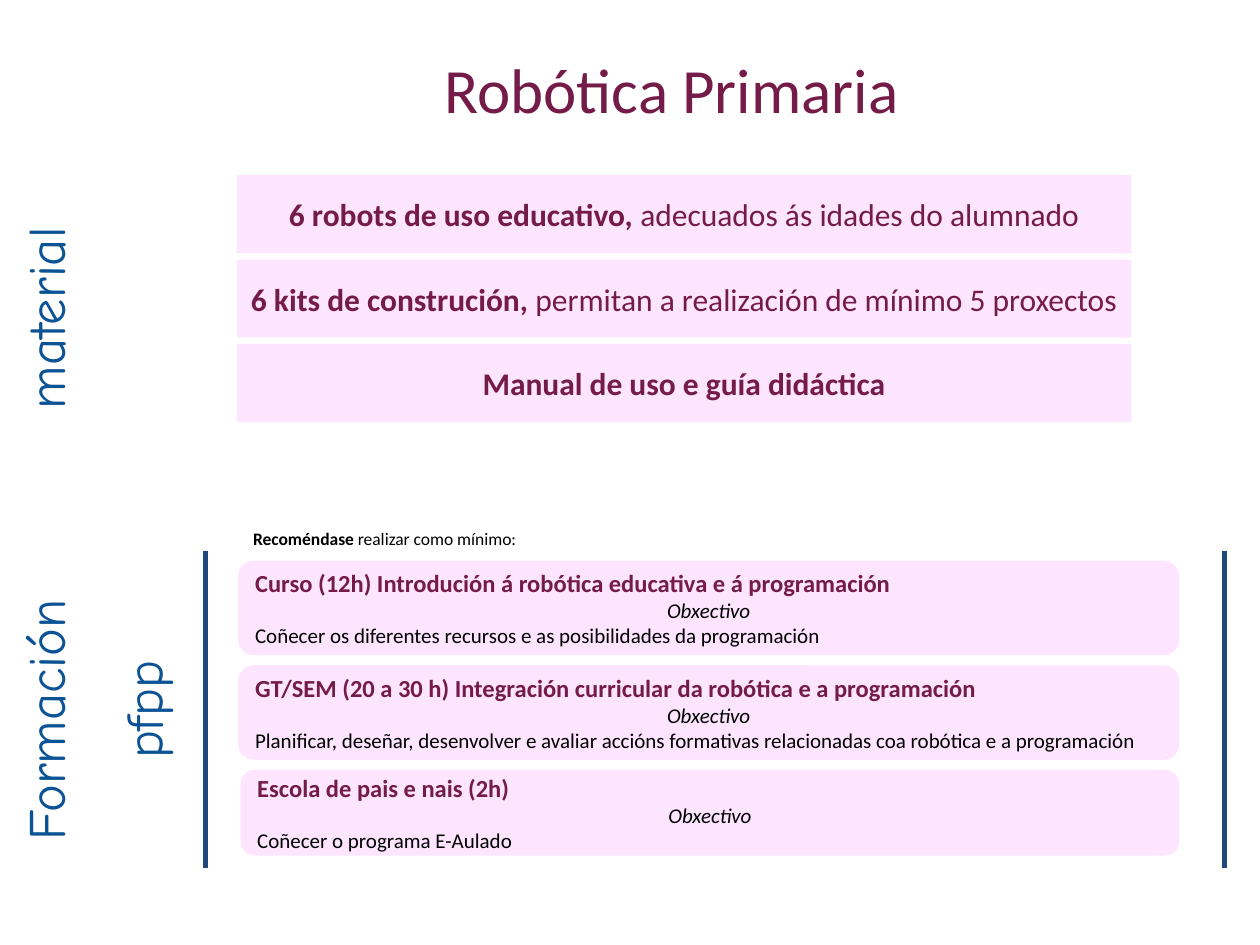
import pptx
import pptx.util
import pptx.dml.color
import pptx.enum.shapes
import pptx.enum.text
import pptx.oxml
import pptx.oxml.ns

Inches = pptx.util.Inches
Pt = pptx.util.Pt
SHAPES = pptx.enum.shapes.MSO_SHAPE
ANCHORS = pptx.enum.text.MSO_ANCHOR
ALIGN = pptx.enum.text.PP_ALIGN
PLUM, BLUE, NAVY, PINK, BLACK = "741B47", "0B5394", "1F497D", "F788FF", "000000"
BAR_LEFT, BAR_TOP, BAR_WIDTH, BAR_HEIGHT, BAR_STEP = 1.88, 1.39, 7.1, 0.62, 0.67
CARD_RIGHT, CARD_TOP, CARD_STEP = 9.36, 4.45, 0.83
RULE_TOP, RULE_BOTTOM = 4.37, 6.89


def color(value):
    """Turn a hex string into a colour."""
    return pptx.dml.color.RGBColor.from_string(value)


def style(paragraph, size, value, name="Calibri", align=ALIGN.LEFT, bold=False, italic=False):
    """Set the font and alignment of a whole paragraph."""
    font = paragraph.font
    font.size, font.name, font.bold, font.italic = Pt(size), name, bold, italic
    font.color.rgb = color(value)
    paragraph.alignment = align


def prepare_frame(box, anchor):
    """Give a box wrapped text with even margins."""
    frame = box.text_frame
    frame.word_wrap = True
    frame.vertical_anchor = anchor
    frame.margin_left = frame.margin_right = Inches(0.1)
    frame.margin_top = frame.margin_bottom = Inches(0.1)
    return frame


def add_lead(paragraph, lead, rest):
    """Write a bold lead followed by plain text."""
    paragraph.add_run().text = lead
    paragraph.runs[0].font.bold = True
    if rest:
        paragraph.add_run().text = rest


def add_panel(page, kind, left, top, width, height):
    """Add a translucent pink panel and return its text frame."""
    panel = page.shapes.add_shape(kind, *map(Inches, (left, top, width, height)))
    panel.shadow.inherit = False
    panel.fill.solid()
    panel.fill.fore_color.rgb = color(PINK)
    tint = panel.fill._xPr.find(".//" + pptx.oxml.ns.qn("a:srgbClr"))
    tint.append(pptx.oxml.parse_xml(f'<a:alpha {pptx.oxml.ns.nsdecls("a")} val="22000"/>'))
    panel.line.fill.background()
    return prepare_frame(panel, ANCHORS.MIDDLE)


def add_bar(page, row, lead, rest):
    """Add one material bar."""
    frame = add_panel(page, SHAPES.RECTANGLE, BAR_LEFT, BAR_TOP + row * BAR_STEP, BAR_WIDTH, BAR_HEIGHT)
    style(frame.paragraphs[0], 18, PLUM, align=ALIGN.CENTER)
    add_lead(frame.paragraphs[0], lead, rest)


def add_card(page, row, left, height, heading, goal):
    """Add one training card with heading, label and goal."""
    top = CARD_TOP + row * CARD_STEP
    frame = add_panel(page, SHAPES.ROUNDED_RECTANGLE, left, top, CARD_RIGHT - left, height)
    frame.text = "\n".join((heading, "Obxectivo", goal))
    title, label, body = frame.paragraphs
    style(title, 14, PLUM, bold=True)
    style(label, 12, BLACK, align=ALIGN.CENTER, italic=True)
    style(body, 12, BLACK)


def add_side_label(page, text, center_x, center_y, length):
    """Add a label that reads upwards."""
    height = 0.75
    box = page.shapes.add_textbox(*map(Inches, (center_x - length / 2, center_y - height / 2, length, height)))
    box.rotation = 270
    frame = prepare_frame(box, ANCHORS.TOP)
    frame.text = text
    style(frame.paragraphs[0], 30, BLUE, "Comic Neue")


def add_rule(page, x):
    """Add a vertical line beside the training cards."""
    ends = map(Inches, (x, RULE_TOP, x, RULE_BOTTOM))
    rule = page.shapes.add_connector(pptx.enum.shapes.MSO_CONNECTOR.STRAIGHT, *ends)
    rule.line.color.rgb = color(NAVY)
    rule.line.width = Pt(3)
    rule._element.spPr.append(pptx.oxml.parse_xml(f'<a:effectLst {pptx.oxml.ns.nsdecls("a")}/>'))


def add_title(page, text):
    """Fill and place the title placeholder."""
    title = page.shapes.title
    title.left, title.top, title.width, title.height = map(Inches, (0.83, 0.3, 9, 0.8))
    title.text_frame.text = text
    title.text_frame.vertical_anchor = ANCHORS.MIDDLE
    style(title.text_frame.paragraphs[0], 36, PLUM, align=ALIGN.CENTER)


def add_note(page, lead, rest):
    """Add the small line above the training cards."""
    box = page.shapes.add_textbox(*map(Inches, (1.91, 4.11, 2.41, 0.34)))
    frame = prepare_frame(box, ANCHORS.TOP)
    style(frame.paragraphs[0], 10, BLACK)
    add_lead(frame.paragraphs[0], lead, rest)


def main():
    """Build the slide and save it."""
    deck = pptx.Presentation()
    deck.slide_width, deck.slide_height = Inches(10), Inches(7.5)
    page = deck.slides.add_slide(deck.slide_layouts[5])
    add_title(page, "Robótica Primaria")
    for label in (("material", 0.38, 1.86, 2.97), ("Formación", 0.38, 5.28, 2.97), ("pfpp", 1.16, 5.4, 1.44)):
        add_side_label(page, *label)
    bars = (
        ("6 robots de uso educativo, ", "adecuados ás idades do alumnado"),
        ("6 kits de construción, ", "permitan a realización de mínimo 5 proxectos"),
        ("Manual de uso e guía didáctica", ""),
    )
    for row, texts in enumerate(bars):
        add_bar(page, row, *texts)
    add_note(page, "Recoméndase ", "realizar como mínimo:")
    cards = (
        (1.89, 0.75, "Curso (12h) Introdución á robótica educativa e á programación",
         "Coñecer os diferentes recursos e as posibilidades da programación"),
        (1.89, 0.75, "GT/SEM (20 a 30 h) Integración curricular da robótica e a programación",
         "Planificar, deseñar, desenvolver e avaliar accións formativas relacionadas "
         "coa robótica e a programación"),
        (1.91, 0.68, "Escola de pais e nais (2h)", "Coñecer o programa E-Aulado"),
    )
    for row, card in enumerate(cards):
        add_card(page, row, *card)
    for x in (1.63, 9.72):
        add_rule(page, x)
    deck.save("out.pptx")


if __name__ == "__main__":
    main()
